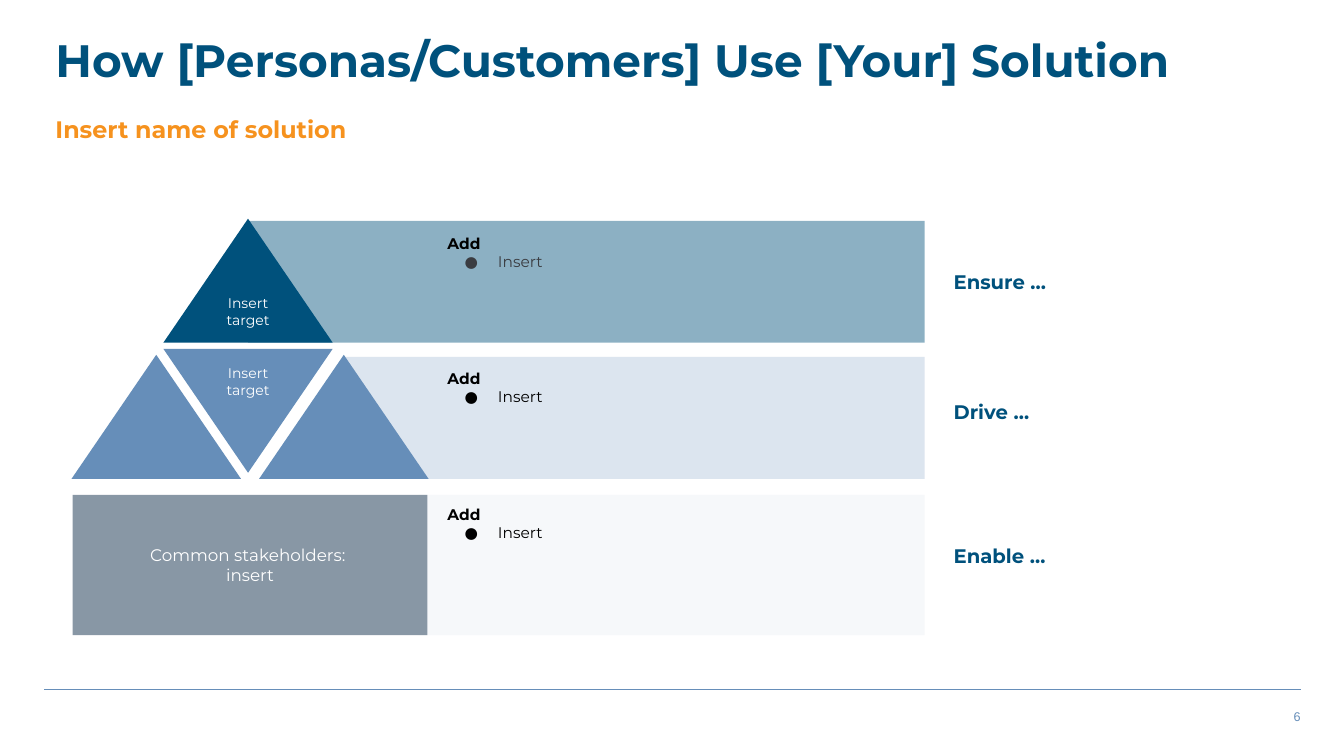
from lxml.etree import SubElement
from pptx import Presentation
from pptx.dml.color import RGBColor
from pptx.enum.shapes import MSO_CONNECTOR, MSO_SHAPE
from pptx.enum.text import MSO_ANCHOR, MSO_AUTO_SIZE, PP_ALIGN
from pptx.oxml.ns import qn
from pptx.util import Inches, Pt

NAVY = RGBColor(0x00, 0x51, 0x7C)
TEAL = RGBColor(0x00, 0x52, 0x7C)
BLUE = RGBColor(0x66, 0x8E, 0xB9)
SKY = RGBColor(0xB3, 0xC6, 0xDC)
PALE = RGBColor(0xE9, 0xEE, 0xF4)
GREY = RGBColor(0x88, 0x97, 0xA5)
DARK = RGBColor(0x3A, 0x3C, 0x41)
GOLD = RGBColor(0xF6, 0x92, 0x1E)
BLACK = RGBColor(0, 0, 0)
WHITE = RGBColor(255, 255, 255)


class Board:
    """Holds the style and the current slide, and draws each kind of element."""

    def __init__(self, deck):
        self.font = "Montserrat"
        self.slide = deck.slides.add_slide(deck.slide_layouts[1])
        self.shapes = self.slide.shapes

    def place(self, shape, box):
        shape.left, shape.top, shape.width, shape.height = map(Inches, box)

    def frame(self, shape, anchor, pad=0.1):
        frame = shape.text_frame
        frame.word_wrap = True
        frame.auto_size = MSO_AUTO_SIZE.NONE
        frame.vertical_anchor = anchor
        frame.margin_left = frame.margin_right = Inches(0.1)
        frame.margin_top = frame.margin_bottom = Inches(pad)
        return frame

    def words(self, para, text, size, color, bold=False, align=PP_ALIGN.LEFT, font=None):
        para.alignment = align
        run = para.add_run()
        run.text = text
        run.font.name = font or self.font
        run.font.size = Pt(size)
        run.font.bold = bold
        run.font.color.rgb = color

    def lines(self, frame, texts, size, color, **style):
        for i, text in enumerate(texts):
            para = frame.add_paragraph() if i else frame.paragraphs[0]
            self.words(para, text, size, color, **style)

    def holder(self, shape, box, text, size, color, anchor, before=0):
        self.place(shape, box)
        para = self.frame(shape, anchor, 0.05).paragraphs[0]
        para.line_spacing = 0.9
        para.space_before = Pt(before)
        props = para._p.get_or_add_pPr()
        props.set("marL", "0")
        props.set("indent", "0")
        SubElement(props, qn("a:buNone"))
        self.words(para, text, size, color, bold=True)

    def block(self, kind, box, color, texts=(), size=10, alpha=None, turn=0):
        shape = self.shapes.add_shape(kind, *map(Inches, box))
        shape.shadow.inherit = False
        shape.rotation = turn
        shape.fill.solid()
        shape.fill.fore_color.rgb = color
        shape.line.fill.background()
        if alpha:
            tint = shape._element.spPr.find(".//" + qn("a:srgbClr"))
            SubElement(tint, qn("a:alpha")).set("val", str(alpha * 1000))
        if texts:
            frame = self.frame(shape, MSO_ANCHOR.MIDDLE)
            self.lines(frame, texts, size, WHITE, align=PP_ALIGN.CENTER)

    def label(self, box, text, size, color, anchor=MSO_ANCHOR.TOP, pad=0.1, **style):
        shape = self.shapes.add_textbox(*map(Inches, box))
        self.lines(self.frame(shape, anchor, pad), [text], size, color, **style)

    def points(self, box, head, item, color):
        shape = self.shapes.add_textbox(*map(Inches, box))
        frame = self.frame(shape, MSO_ANCHOR.TOP)
        self.words(frame.paragraphs[0], head, 11, BLACK, bold=True)
        para = frame.add_paragraph()
        self.words(para, item, 11, color)
        props = para._p.get_or_add_pPr()
        props.set("marL", str(Inches(0.5)))
        props.set("indent", str(Inches(-0.33)))
        tint = SubElement(props, qn("a:buClr"))
        SubElement(tint, qn("a:srgbClr")).set("val", str(color))
        SubElement(props, qn("a:buFont")).set("typeface", self.font)
        SubElement(props, qn("a:buChar")).set("char", "●")

    def rule(self, left, right, top, color):
        line = self.shapes.add_connector(
            MSO_CONNECTOR.STRAIGHT, *map(Inches, (left, top, right, top)))
        line.line.color.rgb = color
        line.line.width = Pt(1)
        SubElement(line._element.spPr, qn("a:effectLst"))


def main():
    deck = Presentation()
    deck.slide_width, deck.slide_height = Inches(13.33), Inches(7.5)
    board = Board(deck)
    title, body = board.slide.placeholders
    board.holder(title, (0.45, 0.33, 12.55, 0.76),
                 "How [Personas/Customers] Use [Your] Solution", 32.4, NAVY, MSO_ANCHOR.TOP)
    board.holder(body, (0.45, 1.07, 8.52, 0.45),
                 "Insert name of solution", 17, GOLD, MSO_ANCHOR.MIDDLE, before=11)
    board.rule(0.44, 12.9, 6.84, BLUE)
    board.label((7.67, 6.98, 5.33, 0.25), "6", 9, BLUE, pad=0.05,
                align=PP_ALIGN.RIGHT, font="Arial")

    edge = 9.17
    bands = [
        (2.46, 2.19, 1.21, TEAL, 45, 2.22, 1.18, DARK, "Ensure …", 2.19),
        (3.39, 3.54, 1.21, SKY, 45, 3.56, 1.18, BLACK, "Drive …", 3.48),
        (4.15, 4.91, 1.39, PALE, 40, 4.91, 1.46, BLACK, "Enable …", 4.91),
    ]
    for left, top, high, color, alpha, head, deep, ink, goal, row in bands:
        board.block(MSO_SHAPE.RECTANGLE, (left, top, edge - left, high), color, alpha=alpha)
        board.points((4.34, head, 4.96, deep), "Add", "Insert", ink)
        board.label((9.36, row, 3.64, 1.21), goal, 14, NAVY, MSO_ANCHOR.MIDDLE, bold=True)

    peaks = [
        (1.62, 2.17, NAVY, ["Insert target"], 0),
        (1.62, 3.46, BLUE, [], 180),
        (2.57, 3.52, BLUE, [], 0),
        (0.71, 3.52, BLUE, [], 0),
    ]
    for left, top, color, texts, turn in peaks:
        board.block(MSO_SHAPE.ISOSCELES_TRIANGLE, (left, top, 1.68, 1.23), color, texts, turn=turn)
    board.label((1.94, 3.52, 1.04, 0.54), "Insert target", 10, WHITE, align=PP_ALIGN.CENTER)
    board.block(MSO_SHAPE.RECTANGLE, (0.72, 4.91, 3.52, 1.39), GREY,
                ["Common stakeholders: ", "insert"], 12)
    deck.save("out.pptx")


if __name__ == "__main__":
    main()
